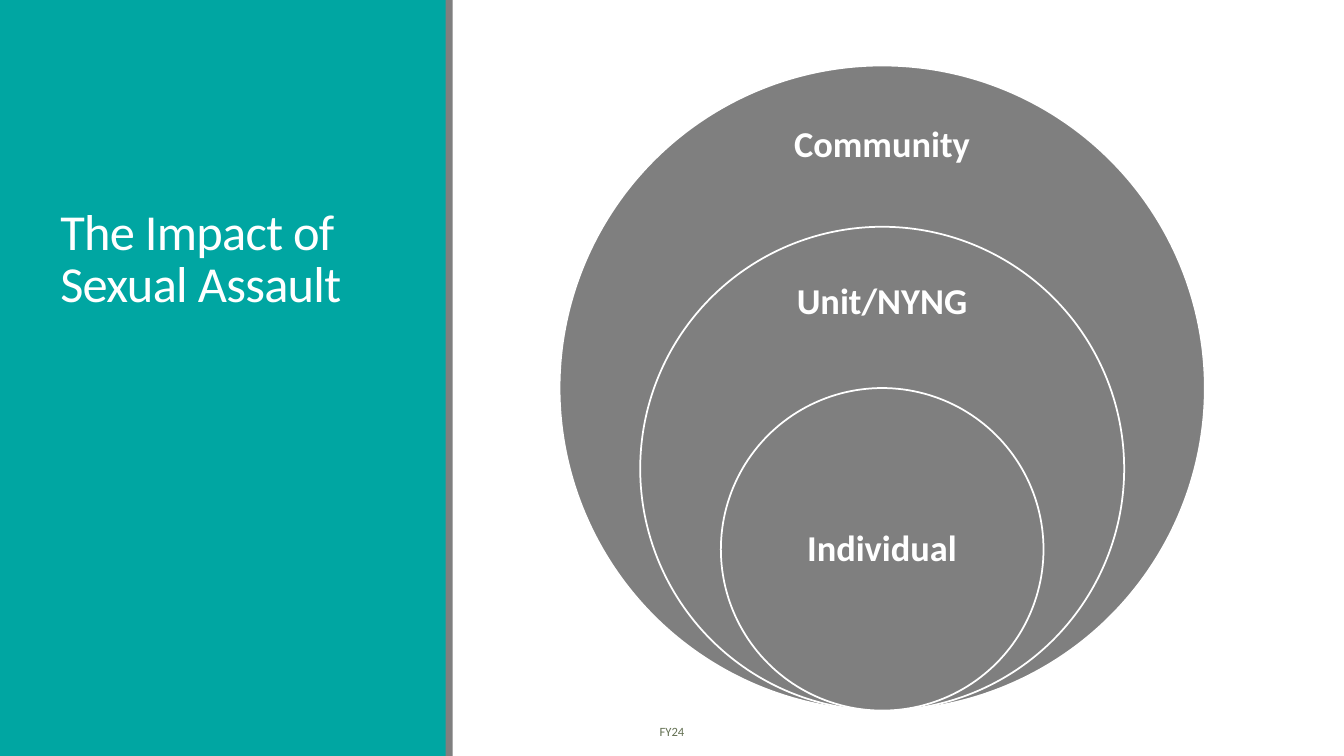
import pptx
import pptx.util
import pptx.dml.color
import pptx.enum.shapes
import pptx.enum.text
from dataclasses import dataclass

TITLE = "The Impact of Sexual Assault"
FOOTER = "FY24"
RINGS = [
    ("Community", 6.4, 0.97, 0.96),
    ("Unit/NYNG", 4.8, 2.55, 0.9),
    ("Individual", 3.2, 4.65, 1.6),
]


@dataclass(frozen=True)
class Theme:
    font: str = "Calibri"
    teal: str = "00A6A2"
    gray: str = "7F7F7F"
    white: str = "FFFFFF"
    olive: str = "637052"
    title_size: int = 36
    label_size: int = 26
    footer_size: int = 9
    outline: float = 1.25


THEME = Theme()
WIDTH, HEIGHT = 13.33, 7.5
PANEL_WIDTH, STRIPE_LEFT, STRIPE_WIDTH = 4.43, 4.42, 0.07
RING_CENTER, RING_BOTTOM = 8.75, 7.05
LABEL_WIDTH, LABEL_INSET = 2.24, 0.2

SHAPE = pptx.enum.shapes.MSO_SHAPE
ANCHOR = pptx.enum.text.MSO_ANCHOR
ALIGN = pptx.enum.text.PP_ALIGN
Pt = pptx.util.Pt
rgb = pptx.dml.color.RGBColor.from_string


def inches(*lengths):
    return [pptx.util.Inches(length) for length in lengths]


def add_shape(slide, kind, box, fill, line=None):
    sp = slide.shapes.add_shape(kind, *inches(*box))
    sp.shadow.inherit = False
    sp.fill.solid()
    sp.fill.fore_color.rgb = rgb(fill)
    if line:
        sp.line.color.rgb = rgb(line)
        sp.line.width = Pt(THEME.outline)
    else:
        sp.line.fill.background()


def add_text(slide, box, text, size, color, anchor=ANCHOR.MIDDLE,
             align=ALIGN.CENTER, bold=False, spacing=1.0, inset=None):
    tf = slide.shapes.add_textbox(*inches(*box)).text_frame
    tf.word_wrap = True
    tf.vertical_anchor = anchor
    if inset is not None:
        tf.margin_left, tf.margin_top, tf.margin_right, tf.margin_bottom = inches(*[inset] * 4)
    p = tf.paragraphs[0]
    p.alignment = align
    p.line_spacing = spacing
    r = p.add_run()
    r.text = text
    p.font.name = THEME.font
    p.font.size = Pt(size)
    p.font.bold = bold
    p.font.color.rgb = rgb(color)
    return r


def main():
    prs = pptx.Presentation()
    prs.slide_width, prs.slide_height = inches(WIDTH, HEIGHT)
    slide = prs.slides.add_slide(prs.slide_layouts[6])

    add_shape(slide, SHAPE.RECTANGLE, (0, 0, PANEL_WIDTH, HEIGHT), THEME.teal)
    add_shape(slide, SHAPE.RECTANGLE, (STRIPE_LEFT, 0, STRIPE_WIDTH, HEIGHT), THEME.gray)
    r = add_text(slide, (0.5, 0.65, 3.5, 2.5), TITLE, THEME.title_size, THEME.white,
                 anchor=ANCHOR.BOTTOM, align=ALIGN.LEFT, spacing=0.85)
    r.font._element.set("spc", "-50")

    for label, size, top, height in RINGS:
        add_shape(slide, SHAPE.OVAL,
                  (RING_CENTER - size / 2, RING_BOTTOM - size, size, size),
                  THEME.gray, THEME.white)
        add_text(slide, (RING_CENTER - LABEL_WIDTH / 2, top, LABEL_WIDTH, height),
                 label, THEME.label_size, THEME.white, bold=True,
                 spacing=0.9, inset=LABEL_INSET)

    add_text(slide, (4.03, 7.06, 5.27, 0.4), FOOTER, THEME.footer_size, THEME.olive)
    prs.save("out.pptx")


if __name__ == "__main__":
    main()
